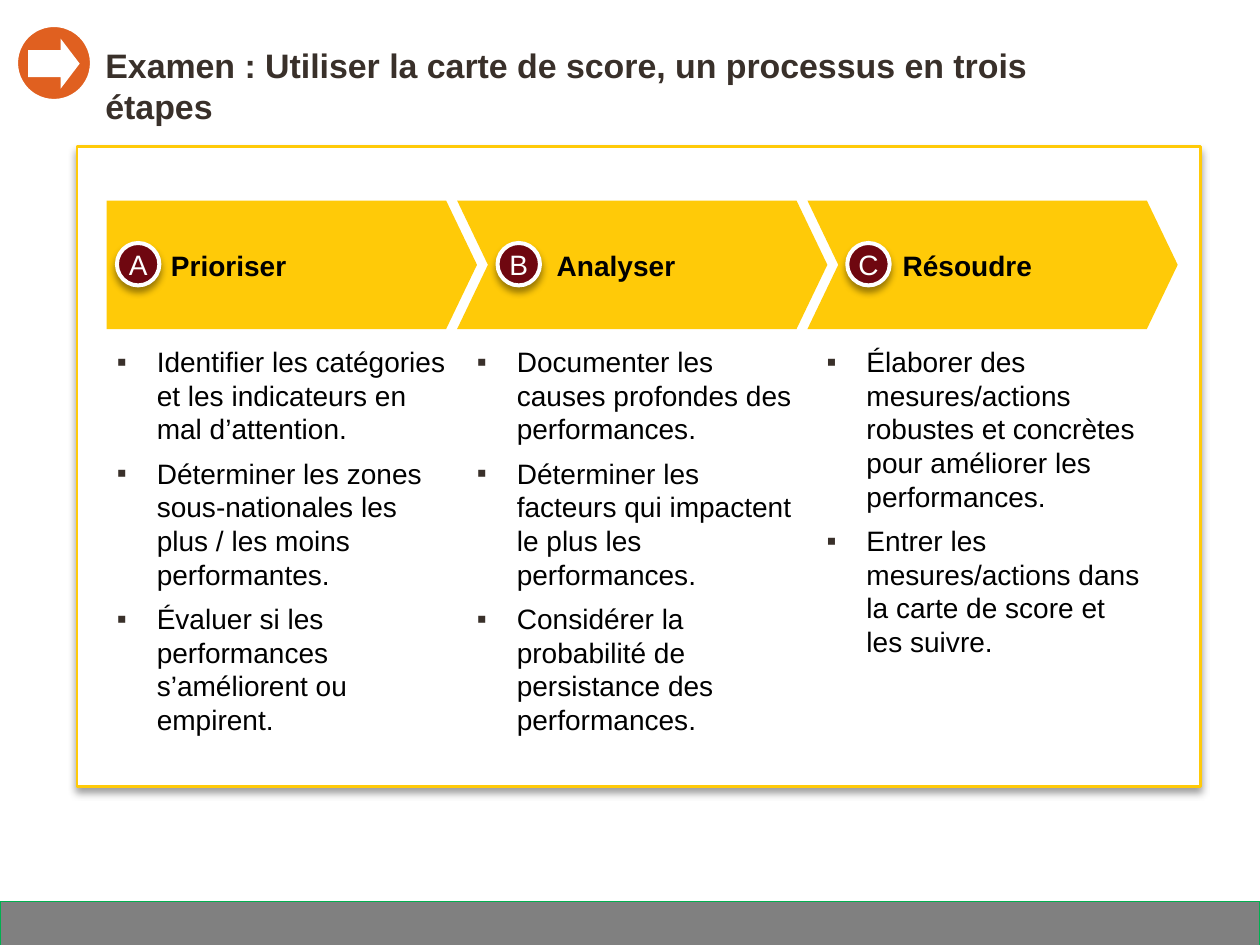
"""Build the slide on the three steps of using the scorecard."""
from dataclasses import dataclass

from lxml import etree
from pptx import Presentation
from pptx import util as u
from pptx.dml.color import RGBColor
from pptx.enum import shapes, text
from pptx.oxml import ns

FONT = "Arial"
GOLD, DARK, WHITE, BLACK = "FFCA08", "39302A", "FFFFFF", "000000"
BODY = 15.7
KIND = shapes.MSO_SHAPE


@dataclass
class Step:
    """One step: its badge, heading and bullet column."""
    mark: str
    name: str
    badge: float
    label: float
    left: float
    width: float
    items: list[str]


STEPS = [
    Step("A", "Prioriser", 0.91, 1.33, 0.91, 2.56, [
        "Identifier les catégories et les indicateurs en mal d’attention.",
        "Déterminer les zones sous-nationales les plus / les moins performantes.",
        "Évaluer si les performances s’améliorent ou empirent."]),
    Step("B", "Analyser", 3.87, 4.33, 3.71, 2.48, [
        "Documenter les causes profondes des performances.",
        "Déterminer les facteurs qui impactent le plus les performances.",
        "Considérer la probabilité de persistance des performances."]),
    Step("C", "Résoudre", 6.59, 7.02, 6.43, 2.44, [
        "Élaborer des mesures/actions robustes et concrètes pour améliorer "
        "les performances.",
        "Entrer les mesures/actions dans la carte de score et les suivre."]),
]


def color(code: str) -> RGBColor:
    """Turn a hex string into a colour."""
    return RGBColor.from_string(code)


def child(node, tag: str, **attrs: str):
    """Append a drawing element and return it."""
    return etree.SubElement(node, ns.qn(tag), attrs)


def paint(shape, fill: str, line: str = "", weight: float = 0) -> None:
    """Set fill and outline, with no shadow."""
    shape.shadow.inherit = False
    shape.fill.solid()
    shape.fill.fore_color.rgb = color(fill)
    if line:
        shape.line.color.rgb = color(line)
        shape.line.width = u.Pt(weight)
    else:
        shape.line.fill.background()


def shade(shape) -> None:
    """Cast a soft shadow straight down."""
    effects = shape._element.spPr.find(ns.qn("a:effectLst"))
    cast = child(effects, "a:outerShdw", blurRad=str(u.Pt(4)), dist=str(u.Pt(3)),
                 dir="5400000", algn="ctr", rotWithShape="0")
    child(child(cast, "a:srgbClr", val=BLACK), "a:alpha", val="40000")


def block(slide, kind, box: tuple, fill: str, line: str = "", weight: float = 0):
    """Add a painted preset shape."""
    shape = slide.shapes.add_shape(kind, *map(u.Inches, box))
    paint(shape, fill, line, weight)
    return shape


def write(shape, lines: list[str], size: float, code: str, bold: bool = False,
          middle: bool = False):
    """Fill a shape with styled paragraphs and no margins."""
    frame = shape.text_frame
    frame.word_wrap = True
    frame.margin_left = frame.margin_right = 0
    frame.margin_top = frame.margin_bottom = 0
    anchor = text.MSO_ANCHOR
    frame.vertical_anchor = anchor.MIDDLE if middle else anchor.TOP
    frame.text = "\n".join(lines)
    for para in frame.paragraphs:
        for run in para.runs:
            run.font.name, run.font.size = FONT, u.Pt(size)
            run.font.bold = bold
            run.font.color.rgb = color(code)
    return frame.paragraphs


def label(slide, box: tuple, lines: list[str], size: float, code: str,
          bold: bool = False, middle: bool = False):
    """Add a text box and return its paragraphs."""
    shape = slide.shapes.add_textbox(*map(u.Inches, box))
    return write(shape, lines, size, code, bold, middle)


def indent(para, left: float, first: float = 0) -> None:
    """Set left margin and first-line indent."""
    props = para._p.get_or_add_pPr()
    props.set("marL", str(u.Inches(left)))
    props.set("indent", str(u.Inches(first)))


def bullet(para) -> None:
    """Give a paragraph a square bullet and space after."""
    indent(para, 0.31, -0.31)
    para.space_after = u.Pt(6)
    props = para._p.get_or_add_pPr()
    child(child(props, "a:buClr"), "a:srgbClr", val=DARK)
    child(props, "a:buFont", typeface=FONT)
    child(props, "a:buChar", char="▪")


def arrow(slide, left: float, notch: float) -> None:
    """Draw one gold step arrow."""
    top, mid, base = 1.56, 2.06, 2.56
    neck, tip = left + 2.64, left + 2.88
    points = [(neck, top), (tip, mid), (neck, base), (left, base),
              (left + notch, mid)]
    path = slide.shapes.build_freeform(u.Inches(left), u.Inches(top))
    path.add_line_segments([(u.Inches(x), u.Inches(y)) for x, y in points])
    paint(path.convert_to_shape(), GOLD)


def draw(slide, index: int, step: Step) -> None:
    """Draw one step with its heading, bullets and badge."""
    arrow(slide, 0.83 + 2.725 * index, 0.24 if index else 0)
    label(slide, (step.label, 1.93, 1.88, 0.26), [step.name], BODY, BLACK,
          bold=True, middle=True)
    for para in label(slide, (step.left, 2.68, step.width, 3.1), step.items,
                      BODY, BLACK):
        bullet(para)
    badge = block(slide, KIND.OVAL, (step.badge, 1.89, 0.33, 0.33),
                  "6F0710", WHITE, 2.25)
    shade(badge)
    mark = write(badge, [step.mark], BODY, WHITE, middle=True)[0]
    mark.alignment = text.PP_ALIGN.CENTER


def main() -> None:
    """Build and save the deck."""
    deck = Presentation()
    deck.slide_width, deck.slide_height = u.Inches(9.8), u.Inches(7.35)
    slide = deck.slides.add_slide(deck.slide_layouts[6])
    block(slide, KIND.RECTANGLE, (0, 7.01, 9.8, 0.37), "808080", "00B050", 0.75)
    shade(block(slide, KIND.RECTANGLE, (0.6, 1.14, 8.74, 4.98), WHITE, GOLD, 1.5))
    title = label(slide, (0.13, 0.35, 8.44, 0.64),
                  ["Examen : Utiliser la carte de score, un processus en trois étapes"],
                  19, DARK, bold=True)[0]
    indent(title, 0.69)
    for index, step in enumerate(STEPS):
        draw(slide, index, step)
    block(slide, KIND.OVAL, (0.13, 0.2, 0.58, 0.58), "E06020", WHITE, 1.5)
    sign = block(slide, KIND.RIGHT_ARROW, (0.22, 0.3, 0.4, 0.39), WHITE)
    sign.adjustments[0], sign.adjustments[1] = 0.54, 0.38
    deck.save("out.pptx")


if __name__ == "__main__":
    main()
